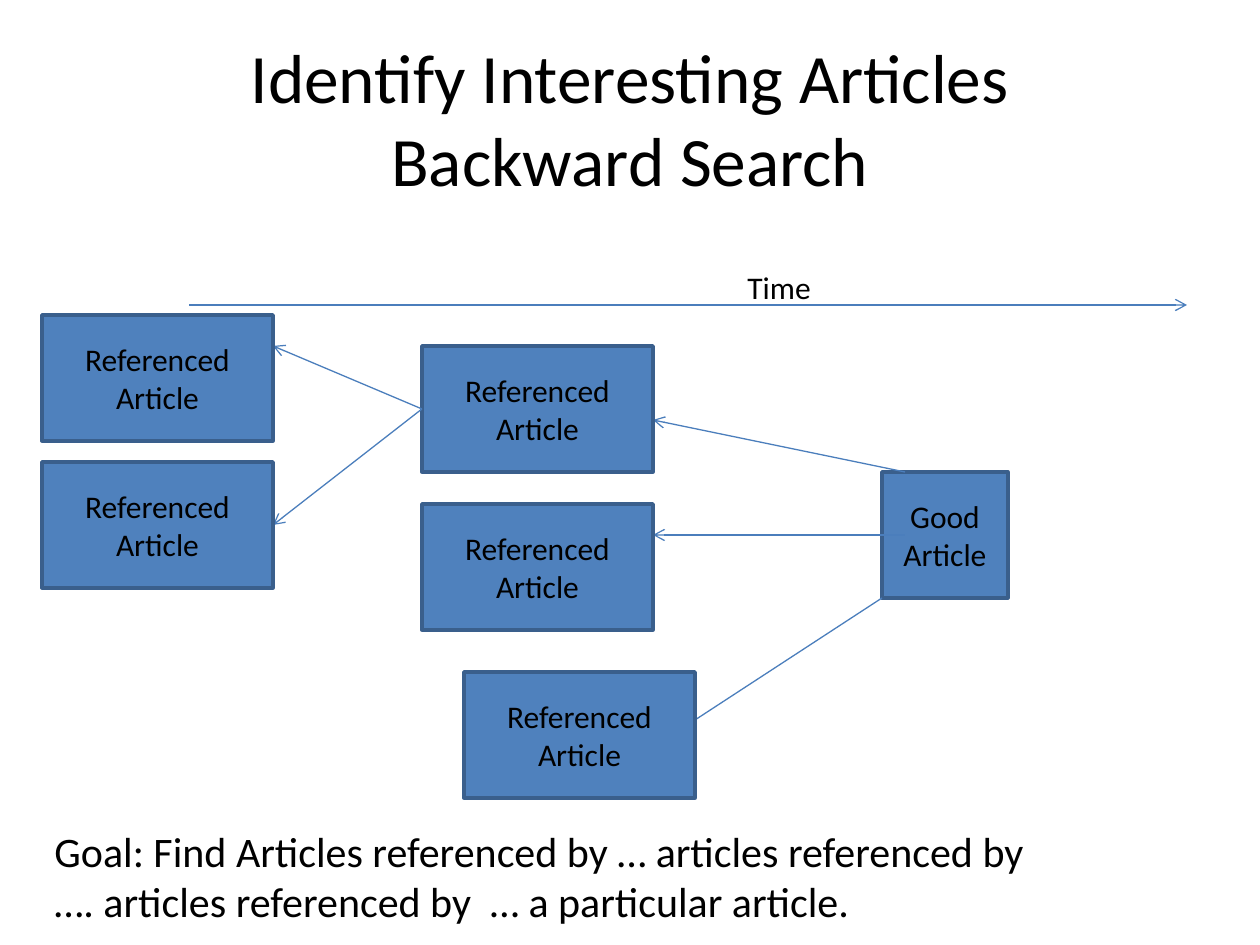
from typing import NamedTuple

from lxml.etree import SubElement
from pptx import Presentation
from pptx.dml.color import RGBColor
from pptx.enum.shapes import MSO_CONNECTOR, MSO_SHAPE
from pptx.enum.text import MSO_ANCHOR, MSO_AUTO_SIZE, PP_ALIGN
from pptx.oxml.ns import qn
from pptx.util import Emu, Pt

PX_PER_INCH = 126
FONT = "Calibri"
BLACK, BOX_FILL, BOX_LINE, ARROW = "000000", "4F81BD", "3A5F8C", "4B7EBC"
REF_W, BOX_H = 231, 126
LEFT_X, MID_X, GOOD_X = 42, 422, 882
LEFT_SIDE = 1


class Box(NamedTuple):
    x: int
    y: int
    w: int = REF_W
    text: str = "Referenced Article"


class Arrow(NamedTuple):
    x1: int
    y1: int
    x2: int
    y2: int


GOOD = Box(GOOD_X, 472, BOX_H, "Good Article")
MID_BOXES = [Box(MID_X, 346), Box(MID_X, 504), Box(464, 672)]
LEFT_BOXES = [Box(LEFT_X, 315), Box(LEFT_X, 462)]

TIME_AXIS = Arrow(189, 305, 1187, 305)
GOOD_ARROWS = [
    Arrow(905, 472, MID_X + REF_W, 420),
    Arrow(905, 535, MID_X + REF_W, 535),
    Arrow(GOOD_X, 598, 672, 735),
]
MID_ARROWS = [
    Arrow(MID_X, 409, LEFT_X + REF_W, 346),
    Arrow(MID_X, 409, LEFT_X + REF_W, 525),
]


def px(n: int) -> Emu:
    return Emu(round(n * 914400 / PX_PER_INCH))


def color(value: str) -> RGBColor:
    return RGBColor.from_string(value)


def style(p, size: float, align=PP_ALIGN.LEFT) -> None:
    p.alignment = align
    p.font.name = FONT
    p.font.size = Pt(size)
    p.font.color.rgb = color(BLACK)


def add_box(slide, box: Box):
    sp = slide.shapes.add_shape(
        MSO_SHAPE.RECTANGLE, px(box.x), px(box.y), px(box.w), px(BOX_H))
    sp.shadow.inherit = False
    sp.fill.solid()
    sp.fill.fore_color.rgb = color(BOX_FILL)
    sp.line.color.rgb = color(BOX_LINE)
    sp.line.width = Pt(2)
    tf = sp.text_frame
    tf.word_wrap = True
    tf.vertical_anchor = MSO_ANCHOR.MIDDLE
    tf.text = box.text
    style(tf.paragraphs[0], 18, PP_ALIGN.CENTER)
    return sp


def add_arrow(slide, arrow: Arrow):
    cx = slide.shapes.add_connector(
        MSO_CONNECTOR.STRAIGHT, *(px(n) for n in arrow))
    cx.line.color.rgb = color(ARROW)
    cx.line.width = Pt(0.75)
    SubElement(cx.line._get_or_add_ln(), qn("a:tailEnd"), type="arrow")
    SubElement(cx._element.spPr, qn("a:effectLst"))
    return cx


def add_text(slide, x: int, y: int, w: int, h: int, lines: list[str], size: int) -> None:
    tf = slide.shapes.add_textbox(px(x), px(y), px(w), px(h)).text_frame
    tf.word_wrap = False
    tf.auto_size = MSO_AUTO_SIZE.SHAPE_TO_FIT_TEXT
    for i, line in enumerate(lines):
        p = tf.add_paragraph() if i else tf.paragraphs[0]
        p.text = line
        style(p, size)


def set_title(slide, first: str, second: str) -> None:
    title = slide.shapes.title
    title.left, title.top, title.width, title.height = px(63), px(38), px(1134), px(158)
    tf = title.text_frame
    tf.auto_size = MSO_AUTO_SIZE.NONE
    tf.vertical_anchor = MSO_ANCHOR.MIDDLE
    p = tf.paragraphs[0]
    p.add_run().text = first
    p.add_line_break()
    p.add_run().text = second
    style(p, 39.6, PP_ALIGN.CENTER)


def main() -> None:
    prs = Presentation()
    prs.slide_width, prs.slide_height = px(1260), px(945)
    slide = prs.slides.add_slide(prs.slide_layouts[5])

    set_title(slide, "Identify Interesting Articles", "Backward Search")
    add_box(slide, GOOD)
    add_arrow(slide, TIME_AXIS)
    add_text(slide, 735, 262, 89, 50, ["Time"], 18)
    for arrow in GOOD_ARROWS:
        add_arrow(slide, arrow)
    mid_shapes = [add_box(slide, box) for box in MID_BOXES]
    for arrow in MID_ARROWS:
        add_arrow(slide, arrow).begin_connect(mid_shapes[0], LEFT_SIDE)
    for box in LEFT_BOXES:
        add_box(slide, box)
    add_text(slide, 42, 819, 1003, 115, [
        "Goal: Find Articles referenced by … articles referenced by",
        "…. articles referenced by  … a particular article.",
    ], 24)
    prs.save("out.pptx")


if __name__ == "__main__":
    main()
